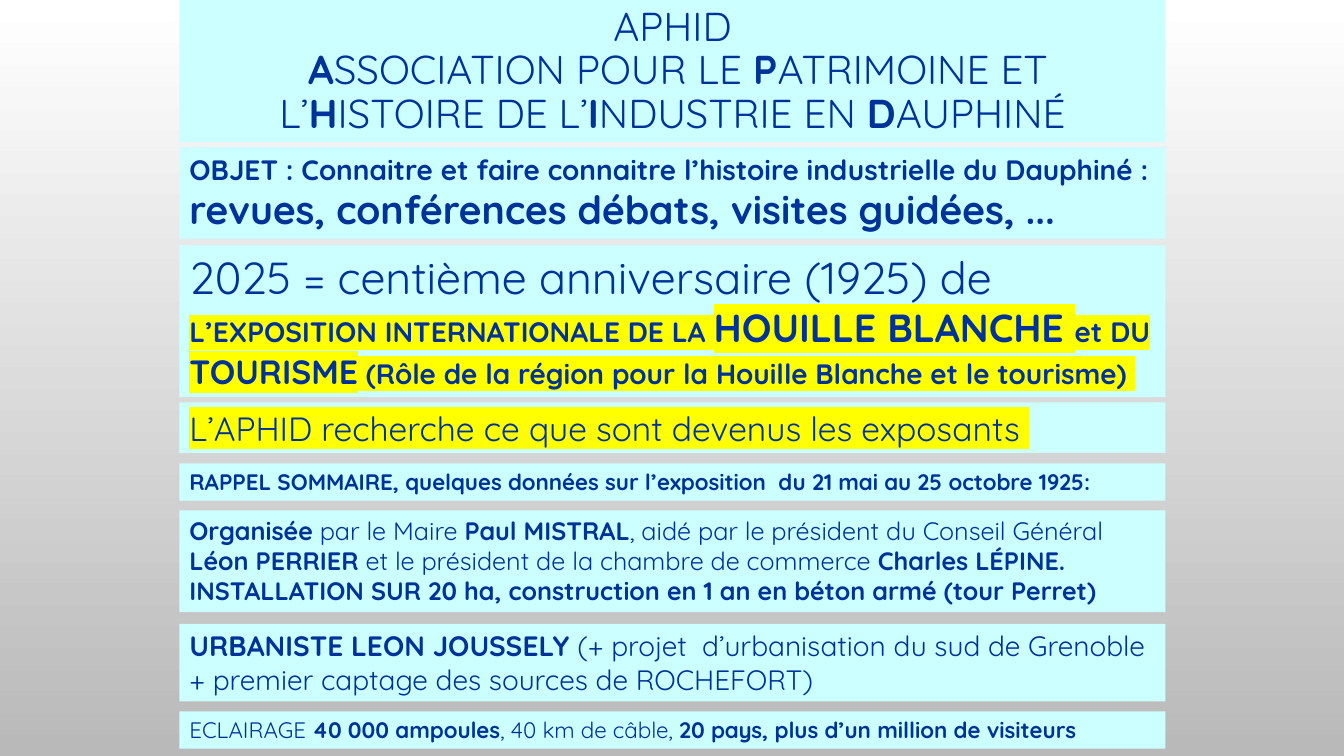
from lxml.etree import SubElement
from pptx import Presentation
from pptx.dml.color import RGBColor
from pptx.enum.text import MSO_ANCHOR, MSO_AUTO_SIZE, PP_ALIGN
from pptx.oxml.ns import qn
from pptx.util import Pt

NAVY = RGBColor(0x00, 0x33, 0x99)
PALE_CYAN = RGBColor(0xCC, 0xFF, 0xFF)
YELLOW = RGBColor(0xFF, 0xFF, 0x00)
WHITE = RGBColor(0xFF, 0xFF, 0xFF)
GREY = RGBColor(0xB9, 0xB9, 0xB9)
FONT = "Quicksand"
LEFT, WIDTH = 128.2, 704.2

deck = Presentation()
deck.slide_width, deck.slide_height = Pt(960), Pt(540)
page = deck.slides.add_slide(deck.slide_layouts[6])

# Background, white at the top to grey at the bottom
backdrop = page.background.fill
backdrop.gradient()
backdrop.gradient_angle = 270
for stop, color, position in zip(backdrop.gradient_stops, (WHITE, GREY), (0, 1)):
    stop.color.rgb = color
    stop.position = position


def add_band(top, height, **frame_format):
    """Add a full-width text band and return its paragraph."""
    box = page.shapes.add_textbox(Pt(LEFT), Pt(top), Pt(WIDTH), Pt(height))
    box.fill.solid()
    box.fill.fore_color.rgb = PALE_CYAN
    for name, value in {"word_wrap": True, **frame_format}.items():
        setattr(box.text_frame, name, value)
    return box.text_frame.paragraphs[0]


def add_span(para, text, size, bold=False, marker=None):
    """Add one run of text, with an optional highlight."""
    span = para.add_run()
    span.text = text
    span.font.color.rgb = NAVY
    if marker is not None:
        highlight = SubElement(span.font._element, qn("a:highlight"))
        SubElement(highlight, qn("a:srgbClr")).set("val", str(marker))
    for name, value in {"size": Pt(size), "bold": bold, "name": FONT}.items():
        setattr(span.font, name, value)


# Title, with the initials of the acronym in bold
title = add_band(-0.7, 102.2, vertical_anchor=MSO_ANCHOR.BOTTOM,
                 auto_size=MSO_AUTO_SIZE.NONE)
for name, value in {"alignment": PP_ALIGN.CENTER, "line_spacing": 0.9}.items():
    setattr(title, name, value)
add_span(title, "APHID", 28.8)
title.add_line_break()
title_parts = [" ", "A", "SSOCIATION POUR LE ", "P", "ATRIMOINE ET L’", "H",
               "ISTOIRE DE L’", "I", "NDUSTRIE EN ", "D", "AUPHINÉ"]
for index, text in enumerate(title_parts):
    add_span(title, text, 28.8, bold=index % 2 == 1)

# Text bands: top, height, then runs of (text, size, bold, highlight)
bands = [
    (105.1, 65.5, [
        ("OBJET : Connaitre et faire connaitre l’histoire industrielle du Dauphiné : ", 20, True),
        ("revues, conférences débats, visites guidées, ...", 28, True),
    ]),
    (175, 108.7, [
        ("2025 = centième anniversaire (1925) de ", 32),
        ("L’EXPOSITION INTERNATIONALE DE LA ", 20, True, YELLOW),
        ("HOUILLE BLANCHE ", 28, True, YELLOW),
        ("et DU ", 20, True, YELLOW),
        ("TOURISME", 24, True, YELLOW),
        (" (Rôle de la région pour la Houille Blanche et le tourisme) ", 20, True, YELLOW),
    ]),
    (287.5, 36, [
        ("L’APHID recherche ce que sont devenus les exposants ", 24, False, YELLOW),
    ]),
    (331, 26.6, [
        ("RAPPEL SOMMAIRE, quelques données sur l’exposition  du 21 mai au 25 octobre 1925:",
         16, True),
    ]),
    (364.5, 72.7, [
        ("Organisée", 18, True),
        (" par le Maire ", 18),
        ("Paul MISTRAL", 18, True),
        (", aidé par le président du Conseil Général ", 18),
        ("Léon PERRIER ", 18, True),
        ("et le président de la chambre de commerce ", 18),
        ("Charles LÉPINE. INSTALLATION SUR 20 ha, construction en 1 an "
         "en béton armé (tour Perret)", 18, True),
    ]),
    (445.6, 55.4, [
        ("URBANISTE LEON JOUSSELY ", 20, True),
        ("(+ projet  d’urbanisation du sud de Grenoble + premier captage "
         "des sources de ROCHEFORT)", 20),
    ]),
    (508.2, 26.6, [
        ("ECLAIRAGE ", 16),
        ("40 000 ampoules", 16, True),
        (", 40 km de câble, ", 16),
        ("20 pays, plus d’un million de visiteurs", 16, True),
    ]),
]
for top, height, spans in bands:
    para = add_band(top, height, auto_size=MSO_AUTO_SIZE.SHAPE_TO_FIT_TEXT)
    for span in spans:
        add_span(para, *span)

deck.save("out.pptx")
